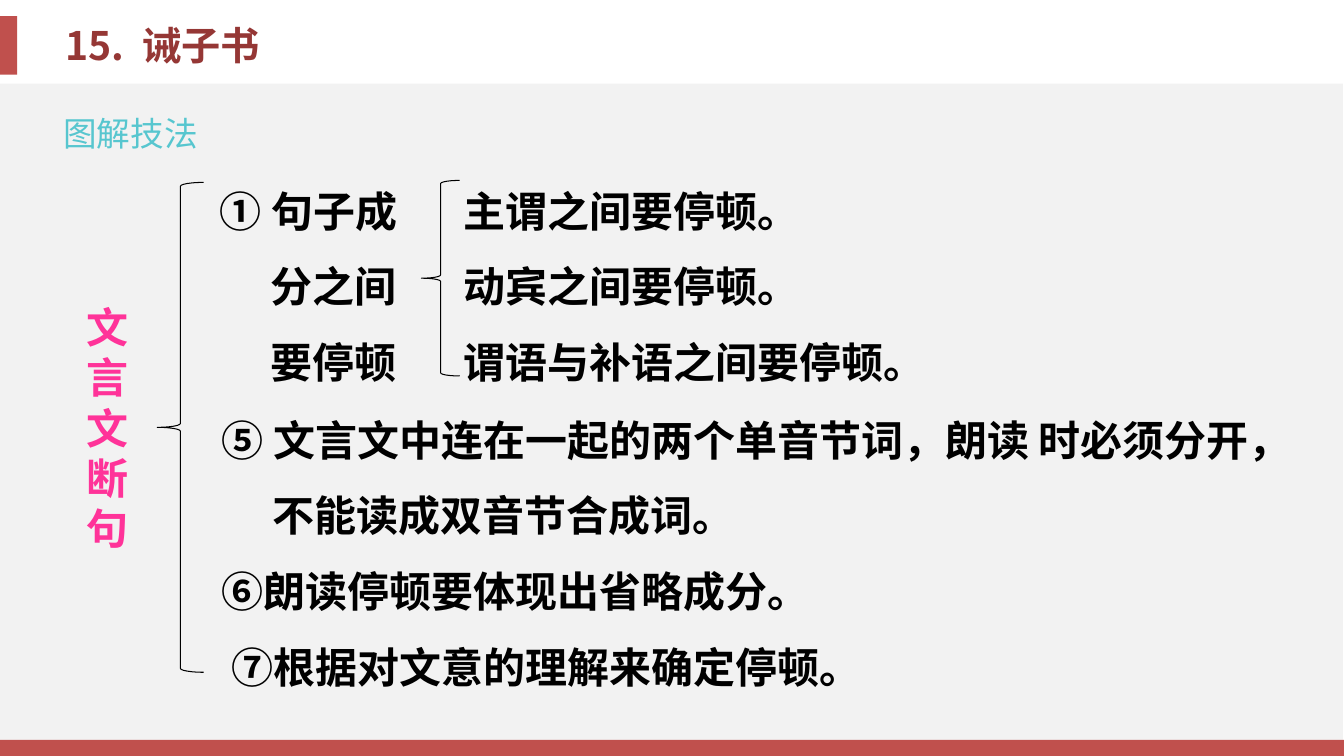
import pptx
import pptx.dml.color
import pptx.enum.shapes
import pptx.enum.text
import pptx.oxml
import pptx.oxml.ns
import pptx.util
from pptx.util import Inches

# Content
COLORS = {"red": "C0504D", "dark_red": "953735", "panel": "F2F2F2",
          "teal": "57C6CF", "pink": "FF3399", "black": "000000"}
CJK, LATIN = "Noto Sans CJK SC", "Calibri"
TITLE = "15.  诫子书"
SECTION = "图解技法"
TOPIC = "文言文断句"
FIRST_RULE = ["① 句子成 分之间 要停顿"]
PAUSES = ["主谓之间要停顿。", "动宾之间要停顿。", "谓语与补语之间要停顿。"]
OTHER_RULES = ["⑤ 文言文中连在一起的两个单音节词，朗读 时必须分开，不能读成双音节合成词。",
               "⑥朗读停顿要体现出省略成分。",
               " ⑦根据对文意的理解来确定停顿。"]

# Left, top, width, height in inches
BARS = [((0, 0.16, 0.17, 0.58), "red"),
        ((0, 0.83, 13.32, 6.64), "panel"),
        ((-0.04, 7.34, 13.43, 0.16), "red")]
BRACES = [(1.56, 1.81, 0.46, 4.86), (4.18, 1.79, 0.38, 1.94)]


def rgb(name):
    return pptx.dml.color.RGBColor.from_string(COLORS[name])


def place(sp, box):
    sp.left, sp.top, sp.width, sp.height = map(Inches, box)


def write(sp, lines, size, color, font=LATIN, bold=True, hanging=False, wrap=True):
    tf = sp.text_frame
    tf.auto_size = pptx.enum.text.MSO_AUTO_SIZE.NONE
    tf.word_wrap = wrap
    for i, line in enumerate(lines):
        p = tf.add_paragraph() if i else tf.paragraphs[0]
        p.alignment = pptx.enum.text.PP_ALIGN.LEFT
        p.space_before = pptx.util.Pt(0)
        p.line_spacing = 1.5 if hanging else 1.0
        indent = Inches(0.5) if hanging else 0
        pPr = p._p.get_or_add_pPr()
        pPr.set("marL", str(indent))
        pPr.set("indent", str(-indent))
        pptx.oxml.ns.qn("a:buNone")
        pPr.append(pptx.oxml.parse_xml(
            '<a:buNone xmlns:a="http://schemas.openxmlformats.org/drawingml/2006/main"/>'))
        r = p.add_run()
        r.text = line
        r.font.size = pptx.util.Pt(size)
        r.font.bold = bold
        r.font.name = font
        r.font.color.rgb = rgb(color)
        east_asian = r._r.get_or_add_rPr().makeelement(
            pptx.oxml.ns.qn("a:ea"), {"typeface": CJK})
        r._r.rPr.append(east_asian)


def text_box(s, box, lines, size, color, **style):
    write(s.shapes.add_textbox(*map(Inches, box)), lines, size, color, **style)


def main():
    prs = pptx.Presentation()
    prs.slide_width, prs.slide_height = Inches(13.33), Inches(7.5)
    s = prs.slides.add_slide(prs.slide_layouts[1])
    title, body = s.shapes.title, s.placeholders[1]

    # Bars and panel, behind the text
    for box, color in BARS:
        sp = s.shapes.add_shape(pptx.enum.shapes.MSO_SHAPE.RECTANGLE, *map(Inches, box))
        sp.shadow.inherit = False
        sp.fill.solid()
        sp.fill.fore_color.rgb = rgb(color)
        sp.line.fill.background()
        title._element.addprevious(sp._element)

    # Headings
    place(title, (0.55, 0.16, 2.61, 0.57))
    title.text_frame.vertical_anchor = pptx.enum.text.MSO_ANCHOR.MIDDLE
    write(title, [TITLE], 28, "dark_red", font=CJK, wrap=False)
    text_box(s, (0.53, 1.07, 2.02, 0.5), [SECTION], 24, "teal", font=CJK, bold=False)

    # Topic and its rules
    text_box(s, (0.76, 2.94, 0.66, 2.63), [TOPIC], 30, "pink")
    text_box(s, (2.08, 1.54, 2.17, 2.37), FIRST_RULE, 30, "black", hanging=True)
    text_box(s, (4.5, 1.54, 8, 2.28), PAUSES, 30, "black", hanging=True)
    place(body, (2.1, 3.81, 10.8, 3.03))
    body.width = Inches(10.46)
    write(body, OTHER_RULES, 30, "black", hanging=True)

    # Braces
    for box in BRACES:
        sp = s.shapes.add_shape(pptx.enum.shapes.MSO_SHAPE.LEFT_BRACE, *map(Inches, box))
        sp.shadow.inherit = False
        sp.fill.background()
        sp.line.color.rgb = rgb("black")
        sp.line.width = pptx.util.Pt(0.75)

    prs.save("out.pptx")


if __name__ == "__main__":
    main()
